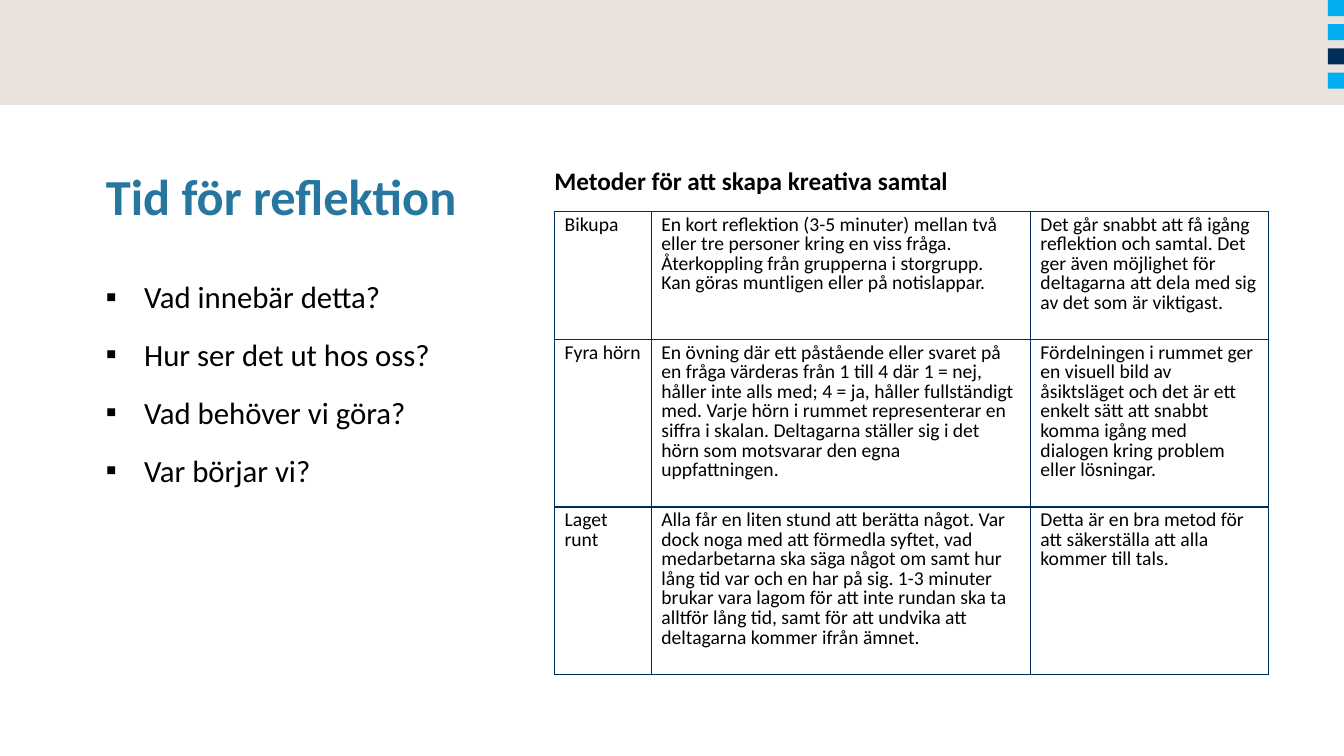
"""Build the reflection slide with its questions and table of conversation methods."""
from lxml.etree import SubElement
from pptx import Presentation
from pptx.dml.color import RGBColor
from pptx.enum.shapes import MSO_SHAPE
from pptx.enum.text import MSO_ANCHOR, MSO_AUTO_SIZE, PP_ALIGN
from pptx.oxml.ns import qn
from pptx.util import Inches, Pt

BEIGE = RGBColor(0xE9, 0xE3, 0xDC)
CYAN = RGBColor(0x00, 0xAE, 0xEF)
NAVY = RGBColor(0x00, 0x2D, 0x5A)
BLUE = RGBColor(0x27, 0x76, 0x9F)
BLACK = RGBColor(0x00, 0x00, 0x00)

QUESTIONS = ["Vad innebär detta?", "Hur ser det ut hos oss?", "Vad behöver vi göra?", "Var börjar vi?"]
METHODS = [
    ("Bikupa",
     "En kort reflektion (3-5 minuter) mellan två eller tre personer kring en viss fråga.\n"
     "Återkoppling från grupperna i storgrupp.\n"
     "Kan göras muntligen eller på notislappar.",
     "Det går snabbt att få igång reflektion och samtal. Det ger även möjlighet för "
     "deltagarna att dela med sig av det som är viktigast."),
    ("Fyra hörn",
     "En övning där ett påstående eller svaret på en fråga värderas från 1 till 4 där 1 = nej, "
     "håller inte alls med; 4 = ja, håller fullständigt med. Varje hörn i rummet representerar "
     "en siffra i skalan. Deltagarna ställer sig i det hörn som motsvarar den egna uppfattningen.",
     "Fördelningen i rummet ger en visuell bild av åsiktsläget och det är ett enkelt sätt att "
     "snabbt komma igång med dialogen kring problem eller lösningar."),
    ("Laget runt",
     "Alla får en liten stund att berätta något. Var dock noga med att förmedla syftet, vad "
     "medarbetarna ska säga något om samt hur lång tid var och en har på sig. 1-3 minuter brukar "
     "vara lagom för att inte rundan ska ta alltför lång tid, samt för att undvika att deltagarna "
     "kommer ifrån ämnet.",
     "Detta är en bra metod för att säkerställa att alla kommer till tals."),
]


class SlideBuilder:
    """Hold the font and the current slide, and add styled elements to it."""

    def __init__(self, slide, font="Calibri"):
        self.slide = slide
        self.font = font

    def style(self, tf, size, color=BLACK, bold=False):
        for p in tf.paragraphs:
            for r in p.runs:
                r.font.name = self.font
                r.font.size = Pt(size)
                r.font.bold = bold
                r.font.color.rgb = color

    def frame(self, tf, inset=0.0):
        tf.word_wrap = True
        tf.auto_size = MSO_AUTO_SIZE.NONE
        tf.vertical_anchor = MSO_ANCHOR.TOP
        tf.margin_left = tf.margin_right = Inches(inset)
        tf.margin_top = tf.margin_bottom = Inches(inset / 2)

    def rect(self, x, y, w, h, color):
        sp = self.slide.shapes.add_shape(
            MSO_SHAPE.RECTANGLE, Inches(x), Inches(y), Inches(w), Inches(h))
        sp.shadow.inherit = False
        sp.fill.solid()
        sp.fill.fore_color.rgb = color
        sp.line.fill.background()

    def title(self, text, x, y, w, h):
        sp = self.slide.shapes.title
        sp.left, sp.top, sp.width, sp.height = Inches(x), Inches(y), Inches(w), Inches(h)
        tf = sp.text_frame
        self.frame(tf)
        tf.text = text
        tf.paragraphs[0].alignment = PP_ALIGN.LEFT
        self.style(tf, 36, BLUE, True)

    def text(self, text, x, y, w, h, size, bold=False, inset=0.0):
        sp = self.slide.shapes.add_textbox(Inches(x), Inches(y), Inches(w), Inches(h))
        tf = sp.text_frame
        self.frame(tf, inset)
        tf.text = text
        self.style(tf, size, bold=bold)
        return tf

    def bullets(self, items, x, y, w, h):
        tf = self.text("\n".join(items), x, y, w, h, 22)
        for i, p in enumerate(tf.paragraphs):
            p.line_spacing = 1.3
            p.space_before = Pt(5 if i else 0)
            p.space_after = Pt(2)
            pPr = p._p.get_or_add_pPr()
            pPr.set("marL", str(Inches(0.38)))
            pPr.set("indent", str(-Inches(0.38)))
            SubElement(pPr, qn("a:buFont"), typeface=self.font)
            SubElement(pPr, qn("a:buChar"), char="▪")

    def borders(self, cell, color):
        tcPr = cell._tc.get_or_add_tcPr()
        for side in ("L", "R", "T", "B"):
            ln = SubElement(tcPr, qn(f"a:ln{side}"), w=str(Pt(1)))
            fill = SubElement(ln, qn("a:solidFill"))
            SubElement(fill, qn("a:srgbClr"), val=str(color))

    def table(self, rows, x, y, widths, heights):
        tbl = self.slide.shapes.add_table(
            len(rows), len(widths), Inches(x), Inches(y),
            Inches(sum(widths)), Inches(sum(heights))).table
        tbl.first_row = tbl.horz_banding = False
        for col, width in zip(tbl.columns, widths):
            col.width = Inches(width)
        for row, height, texts in zip(tbl.rows, heights, rows):
            row.height = Inches(height)
            for cell, text in zip(row.cells, texts):
                self.borders(cell, NAVY)
                cell.fill.background()
                tf = cell.text_frame
                tf.text = text
                for p in tf.paragraphs:
                    p.line_spacing = Pt(14)
                self.style(tf, 14)


def main():
    prs = Presentation()
    prs.slide_width, prs.slide_height = Inches(13.33), Inches(7.5)
    s = SlideBuilder(prs.slides.add_slide(prs.slide_layouts[5]))
    s.rect(0, 0, 13.33, 1.04, BEIGE)
    for i, color in enumerate((CYAN, CYAN, NAVY, CYAN)):
        s.rect(13.17, 0.24 * i, 0.16, 0.16, color)
    s.title("Tid för reflektion", 1.05, 1.64, 3.99, 0.86)
    s.bullets(QUESTIONS, 1.05, 2.65, 5.42, 4.31)
    s.table(METHODS, 5.5, 2.1, (0.96, 3.76, 2.36), (1.27, 1.66, 1.66))
    s.text("Metoder för att skapa kreativa samtal", 5.4, 1.59, 6.67, 0.4, 18, bold=True, inset=0.1)
    prs.save("out.pptx")


if __name__ == "__main__":
    main()
